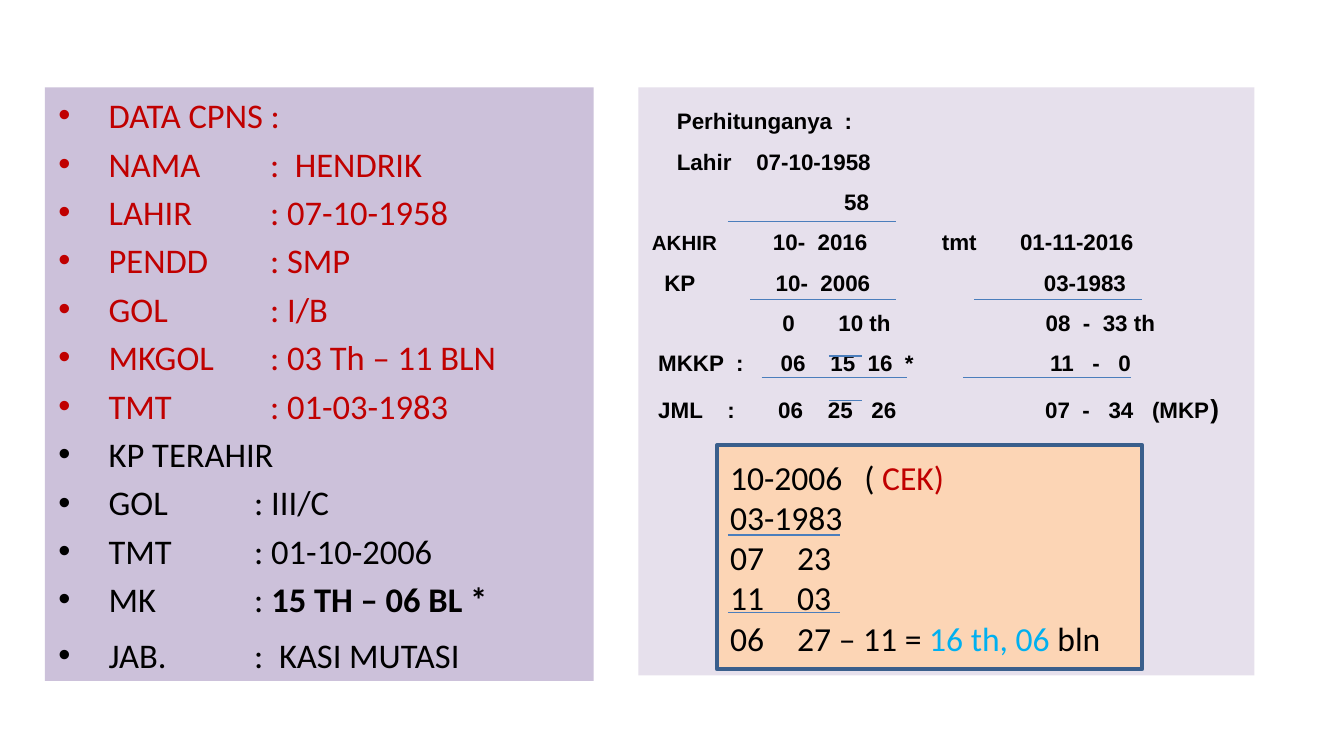
from lxml import etree
from pptx import Presentation
from pptx import util as u
from pptx.dml.color import RGBColor
from pptx.enum import shapes, text
from pptx.oxml.ns import qn

RED, BLACK, SKY = "C00000", "000000", "00B0F0"
LINE = "4B7EBC"

# Employee data: label, value, colour
EMPLOYEE = [
    ("DATA CPNS :", "", RED),
    ("NAMA", ":  HENDRIK", RED),
    ("LAHIR", ": 07-10-1958", RED),
    ("PENDD", ": SMP", RED),
    ("GOL", ": I/B", RED),
    ("MKGOL", ": 03 Th – 11 BLN", RED),
    ("TMT", ": 01-03-1983", RED),
    ("KP TERAHIR", "", BLACK),
    ("GOL", ": III/C", BLACK),
    ("TMT", ": 01-10-2006", BLACK),
    ("MK", ": ", BLACK),
    ("JAB.", ":  KASI MUTASI", BLACK),
]

# Calculation: left margin in points, then the spans of text with their sizes
CALCULATION = [
    (13.4, [("Perhitunganya  :", 12)]),
    (13.4, [("Lahir    07-10-1958", 12)]),
    (103, [("58", 12)]),
    (0, [("AKHIR", 11), ("         10-  2016            tmt       01-11-2016", 12)]),
    (6.7, [("KP             10-  2006                            03-1983", 12)]),
    (70, [("0       10 th                         08  -  33 th", 12)]),
    (3.4, [("MKKP  :      06    15  16  *                      11   -   0", 12)]),
    (3.4, [("JML    :       06    25   26                        07  -   34   (MKP", 12),
           (")", 14)]),
]

# Check: spans of text with their colours
CHECK = [
    [("10-2006\t( ", BLACK), ("CEK)", RED)],
    [("03-1983", BLACK)],
    [("07\t23", BLACK)],
    [("11\t03", BLACK)],
    [("06\t27 – 11 = ", BLACK), ("16 th, 06 ", SKY), ("bln", BLACK)],
]

# Sum lines: left, right, height on the page
SUM_LINES = [
    (390, 480, 118.8), (402, 480, 160.6), (522, 612, 160.6),
    (408, 486, 202.3), (516, 606, 202.3),
    (444, 462, 190.8), (444, 462, 214.6),
    (390, 450, 286.6), (390, 450, 328.3),
]


def color(value):
    return RGBColor.from_string(value)


def assign(target, values):
    for name, value in values.items():
        setattr(target, name, value)


def format_box(box, place, fill, anchor):
    names = ("left", "top", "width", "height")
    assign(box, dict(zip(names, map(u.Pt, place))))
    box.fill.solid()
    box.fill.fore_color.rgb = color(fill)
    assign(box.text_frame, {
        "word_wrap": True, "auto_size": text.MSO_AUTO_SIZE.NONE,
        "vertical_anchor": anchor,
        "margin_left": u.Pt(7.2), "margin_right": u.Pt(7.2),
        "margin_top": u.Pt(3.6), "margin_bottom": u.Pt(3.6),
    })


def next_para(box, number):
    frame = box.text_frame
    return frame.add_paragraph() if number else frame.paragraphs[0]


def set_layout(para, margin=0, hanging=0, spacing=1.0, before=0):
    assign(para, {"alignment": text.PP_ALIGN.LEFT, "line_spacing": spacing,
                  "space_before": u.Pt(before), "space_after": u.Pt(0)})
    props = para._p.get_or_add_pPr()
    props.set("marL", str(u.Pt(margin)))
    props.set("indent", str(-u.Pt(hanging)))
    return props


def add_bullet(props, stop):
    etree.SubElement(props, qn("a:buFont")).set("typeface", "Arial")
    etree.SubElement(props, qn("a:buChar")).set("char", "•")
    tabs = etree.SubElement(props, qn("a:tabLst"))
    tab = etree.SubElement(tabs, qn("a:tab"))
    tab.set("pos", str(u.Pt(stop)))
    tab.set("algn", "l")


def add_span(para, words, size, font="Calibri", tint=BLACK, bold=False):
    span = para.add_run()
    span.text = words
    assign(span.font, {"size": u.Pt(size), "name": font, "bold": bold})
    span.font.color.rgb = color(tint)


def fill_employee(box):
    for number, (label, value, tint) in enumerate(EMPLOYEE):
        para = next_para(box, number)
        before = 7.8 if label == "JAB." else 3.7
        props = set_layout(para, margin=27, hanging=27, before=before)
        add_bullet(props, 113.5 if tint == RED else 105)
        add_span(para, f"{label}\t{value}" if value else label, 18.5, tint=tint)
        if label == "MK":
            add_span(para, "15 TH – 06 BL *", 18.5, bold=True)


def fill_calculation(box):
    for number, (margin, spans) in enumerate(CALCULATION):
        para = next_para(box, number)
        props = set_layout(para, margin=margin, spacing=1.5)
        etree.SubElement(props, qn("a:buNone"))
        for words, size in spans:
            add_span(para, words, size, "Arial", bold=True)


def fill_check(box):
    for number, spans in enumerate(CHECK):
        para = next_para(box, number)
        set_layout(para)
        for words, tint in spans:
            add_span(para, words, 18, tint=tint)


def add_sum_line(page, left, right, height):
    line = page.shapes.add_connector(
        shapes.MSO_CONNECTOR.STRAIGHT,
        u.Pt(left), u.Pt(height), u.Pt(right), u.Pt(height))
    line.line.color.rgb = color(LINE)
    line.line.width = u.Pt(0.75)
    etree.SubElement(line._element.spPr, qn("a:effectLst"))


def main():
    deck = Presentation()
    assign(deck, {"slide_width": u.Pt(720), "slide_height": u.Pt(405)})
    page = deck.slides.add_slide(deck.slide_layouts[3])

    # Two content panels, no title
    title = page.shapes.title._element
    title.getparent().remove(title)
    employee, calculation = page.placeholders
    top = text.MSO_ANCHOR.TOP
    format_box(employee, (24, 46.8, 294, 318), "CCC1DA", top)
    fill_employee(employee)
    format_box(calculation, (342, 46.8, 330, 315), "E6E0EC", top)
    fill_calculation(calculation)

    # Check box
    place = (384, 238.5, 228, 120)
    check = page.shapes.add_shape(shapes.MSO_SHAPE.RECTANGLE, *map(u.Pt, place))
    check.shadow.inherit = False
    format_box(check, place, "FCD5B5", text.MSO_ANCHOR.MIDDLE)
    check.line.color.rgb = color("3A5F8C")
    check.line.width = u.Pt(2)
    fill_check(check)

    # Lines under the sums
    for ends in SUM_LINES:
        add_sum_line(page, *ends)

    deck.save("out.pptx")


if __name__ == "__main__":
    main()
